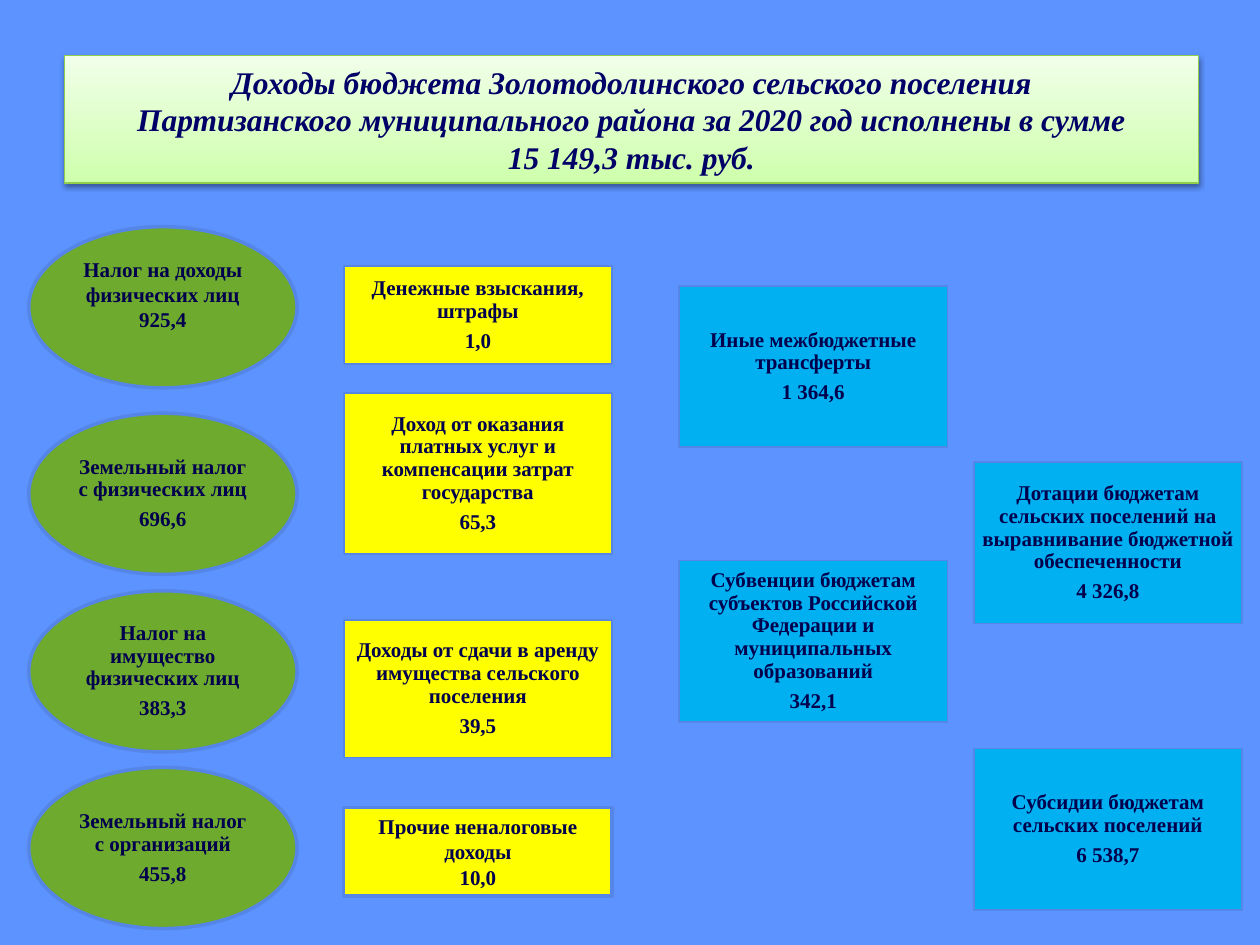
from lxml import etree
from pptx import Presentation
from pptx.dml.color import RGBColor
from pptx.enum import shapes, text
from pptx.oxml import ns
from pptx.util import Cm, Pt

COLORS = {
    "background": "5D93FF",
    "tax": "6EAA2E",
    "non_tax": "FFFF00",
    "transfer": "00B0F0",
    "outline": "5485E7",
    "label": "00004D",
    "title": "000066",
    "title_line": "8FCF4B",
    "title_bottom": "CEFFAC",
    "title_top": "F1FFE9",
    "shadow": "000000",
}
FONT = "Times New Roman"
BOX_WIDTH, BOX_HEIGHT = 5.41, 3.25
OVAL, RECTANGLE = shapes.MSO_SHAPE.OVAL, shapes.MSO_SHAPE.RECTANGLE

# Each item: top and height in cm, label, value, compact (spaced like a list) or not
TAXES = [
    (4.57, BOX_HEIGHT, "Налог на доходы физических лиц", "925,4", False),
    (8.33, BOX_HEIGHT, "Земельный налог с физических лиц", "696,6", True),
    (11.91, BOX_HEIGHT, "Налог на имущество физических лиц", "383,3", True),
    (15.47, BOX_HEIGHT, "Земельный налог с организаций", "455,8", True),
]
NON_TAX = [
    (5.36, 1.98, "Денежные взыскания, штрафы", "1,0", True),
    (7.92, BOX_HEIGHT, "Доход от оказания платных услуг и компенсации затрат государства",
     "65,3", True),
    (12.5, 2.77, "Доходы от сдачи в аренду имущества сельского поселения", "39,5", True),
    (16.28, 1.78, "Прочие неналоговые доходы", "10,0", False),
]
TRANSFERS = [
    (5.77, BOX_HEIGHT, "Иные межбюджетные трансферты", "1 364,6", True),
    (11.3, BOX_HEIGHT, "Субвенции бюджетам субъектов Российской Федерации и "
     "муниципальных образований", "342,1", True),
]
GRANTS = [
    (9.32, BOX_HEIGHT, "Дотации бюджетам сельских поселений на выравнивание "
     "бюджетной обеспеченности", "4 326,8", True),
    (15.09, BOX_HEIGHT, "Субсидии бюджетам сельских поселений", "6 538,7", True),
]


def rgb(name):
    return RGBColor.from_string(COLORS[name])


def format_text(text_frame, size, color, italic=False):
    text_frame.word_wrap = True
    for paragraph in text_frame.paragraphs:
        paragraph.alignment = text.PP_ALIGN.CENTER
        for run in paragraph.runs:
            font = run.font
            font.name, font.size = FONT, Pt(size)
            font.bold, font.italic = True, italic
            font.color.rgb = rgb(color)


def add_soft_shadow(shape):
    effects = etree.SubElement(shape._element.spPr, ns.qn("a:effectLst"))
    shadow = etree.SubElement(effects, ns.qn("a:outerShdw"), blurRad=str(Pt(3.1)),
                              dist=str(Pt(1.6)), dir="5400000", rotWithShape="0")
    color = etree.SubElement(shadow, ns.qn("a:srgbClr"), val=COLORS["shadow"])
    etree.SubElement(color, ns.qn("a:alpha"), val="38000")


def place_title(slide, left, top, width, height):
    title = slide.shapes.title
    title.left, title.top, title.width, title.height = map(Cm, (left, top, width, height))
    title.fill.gradient()
    title.fill.gradient_angle = 90
    for stop, name in zip(title.fill.gradient_stops, ("title_bottom", "title_top")):
        stop.color.rgb = rgb(name)
    title.line.color.rgb = rgb("title_line")
    title.line.width = Pt(0.75)
    add_soft_shadow(title)
    frame = title.text_frame
    frame.text = ("Доходы бюджета Золотодолинского сельского поселения\v"
                  "Партизанского муниципального района за 2020 год исполнены в сумме\v"
                  "15 149,3 тыс. руб.")
    frame.auto_size = text.MSO_AUTO_SIZE.NONE
    frame.vertical_anchor = text.MSO_ANCHOR.MIDDLE
    format_text(frame, 18, "title", italic=True)


def add_income(slide, kind, color, left, top, height, label, value, compact):
    shape = slide.shapes.add_shape(kind, Cm(left), Cm(top), Cm(BOX_WIDTH), Cm(height))
    shape.shadow.inherit = False
    shape.fill.solid()
    shape.fill.fore_color.rgb = rgb(color)
    shape.line.color.rgb = rgb("outline")
    shape.line.width = Pt(1 if compact and kind == RECTANGLE else 2)
    frame = shape.text_frame
    frame.text = f"{label}\n{value}"
    format_text(frame, 12, "label")
    frame.vertical_anchor = text.MSO_ANCHOR.MIDDLE if compact else text.MSO_ANCHOR.TOP
    if compact:
        frame.margin_left = frame.margin_right = Cm(0.13)
        frame.margin_top = frame.margin_bottom = Cm(0.13)
        for paragraph in frame.paragraphs:
            paragraph.line_spacing = 0.9
            paragraph.space_after = Pt(4.2)


def add_column(slide, left, kind, color, items):
    for item in items:
        add_income(slide, kind, color, left, *item)


def main():
    presentation = Presentation()
    presentation.slide_width, presentation.slide_height = Cm(25.4), Cm(19.05)
    slide = presentation.slides.add_slide(presentation.slide_layouts[5])
    slide.background.fill.solid()
    slide.background.fill.fore_color.rgb = rgb("background")
    place_title(slide, 1.3, 1.12, 22.86, 2.57)
    add_column(slide, 0.58, OVAL, "tax", TAXES)
    add_column(slide, 6.93, RECTANGLE, "non_tax", NON_TAX)
    add_column(slide, 13.69, RECTANGLE, "transfer", TRANSFERS)
    add_column(slide, 19.63, RECTANGLE, "transfer", GRANTS)
    presentation.save("out.pptx")


if __name__ == "__main__":
    main()
